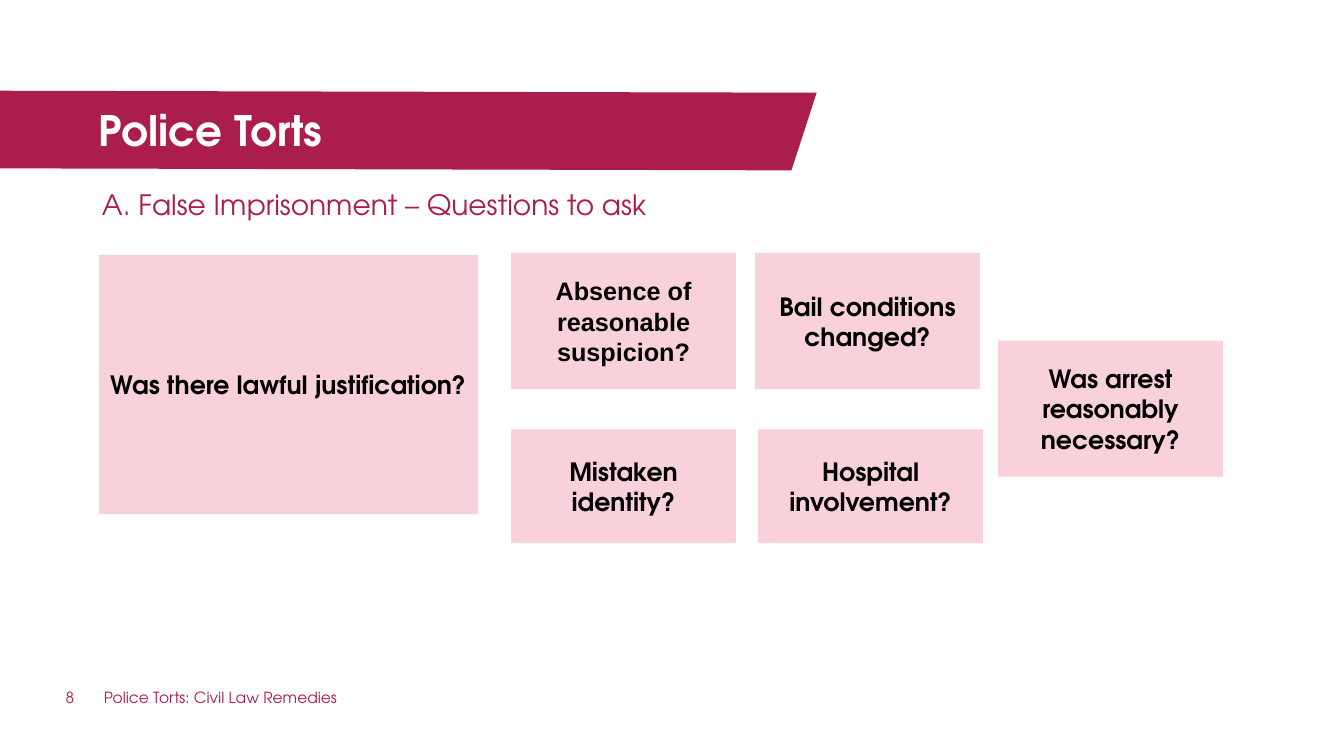
from pptx import Presentation
from pptx.dml.color import RGBColor
from pptx.enum.shapes import MSO_SHAPE
from pptx.enum.text import MSO_ANCHOR, MSO_AUTO_SIZE, PP_ALIGN
from pptx.util import Pt

PX = 9144
CRIMSON = RGBColor(0xAB, 0x1E, 0x4B)
PINK = RGBColor(0xF8, 0xD1, 0xDA)
WHITE = RGBColor(0xFF, 0xFF, 0xFF)
BLACK = RGBColor(0x00, 0x00, 0x00)
DISPLAY_FONT = "TeX Gyre Adventor"
PLAIN_FONT = "Arial"
RECTANGLE = MSO_SHAPE.RECTANGLE
TOP, MIDDLE = MSO_ANCHOR.TOP, MSO_ANCHOR.MIDDLE
LEFT, CENTER = PP_ALIGN.LEFT, PP_ALIGN.CENTER
NO_AUTOFIT = MSO_AUTO_SIZE.NONE


def scale(*lengths):
    """Turn lengths in px into EMU."""
    return [length * PX for length in lengths]


def place(shape, box):
    """Move and size a shape to a box of left, top, width and height."""
    shape.left, shape.top, shape.width, shape.height = scale(*box)


def write(shape, text, size, color, font=DISPLAY_FONT, bold=False, align=LEFT,
          anchor=TOP, inset=(0, 0), line_spacing=1.0, space_after=0):
    """Put one formatted paragraph into a shape."""
    frame = shape.text_frame
    frame.word_wrap = True
    frame.auto_size = NO_AUTOFIT
    frame.vertical_anchor = anchor
    frame.margin_left = frame.margin_right = inset[0] * PX
    frame.margin_top = frame.margin_bottom = inset[1] * PX
    frame.text = text
    paragraph = frame.paragraphs[0]
    paragraph.alignment = align
    paragraph.line_spacing = line_spacing
    paragraph.space_before = Pt(0)
    paragraph.space_after = Pt(space_after)
    run_font = paragraph.runs[0].font
    run_font.name = font
    run_font.size = Pt(size)
    run_font.bold = bold
    run_font.color.rgb = color


def paint(shape, color):
    """Give a shape a flat fill without line or shadow."""
    shape.shadow.inherit = False
    shape.fill.solid()
    shape.fill.fore_color.rgb = color
    shape.line.fill.background()


def add_heading(slide, box):
    """Draw the slanted band with the title on it and the subtitle below."""
    left, top, width, height = box
    builder = slide.shapes.build_freeform(left, top, scale=PX)
    builder.add_line_segments([
        (left + width, top + 2),
        (left + width - 25, top + height),
        (left, top + height - 2),
    ], close=True)
    band = builder.convert_to_shape()
    paint(band, CRIMSON)

    title = slide.shapes.title
    title.element.addprevious(band.element)
    place(title, (left + 98, top + 14, 682, 49))
    write(title, "Police Torts", 30, WHITE, bold=True)

    subtitle = slide.placeholders[1]
    place(subtitle, (left + 101, top + 89, 1087, 47))
    write(subtitle, "A. False Imprisonment – Questions to ask", 20, CRIMSON,
          line_spacing=1.2, space_after=2)


def add_card(slide, box, text, font=DISPLAY_FONT):
    """Draw a pink card with a centred question."""
    card = slide.shapes.add_shape(RECTANGLE, *scale(*box))
    paint(card, PINK)
    write(card, text, 18, BLACK, font=font, bold=True, align=CENTER,
          anchor=MIDDLE, inset=(10, 5))


def add_questions(slide, box):
    """Lay out the main question and its five follow-up cards."""
    left, top, width, height = box
    card_width, tall, short = 223, 135, 113
    first = left + 409
    second = first + card_width + 19
    last = left + width - card_width
    lower = top + height - short
    add_card(slide, (left, top + 2, 376, 257), "Was there lawful justification?")
    add_card(slide, (first, top, card_width, tall),
             "Absence of reasonable suspicion?", font=PLAIN_FONT)
    add_card(slide, (first, lower, card_width, short), "Mistaken identity?")
    add_card(slide, (second, top, card_width, tall), "Bail conditions changed?")
    add_card(slide, (second + 3, lower, card_width, short), "Hospital involvement?")
    add_card(slide, (last, top + 87, card_width, tall),
             "Was arrest reasonably necessary?")


def add_footer(slide, box):
    """Write the slide number and the name of the talk."""
    left, top, width, height = box
    number_width = 38
    for text, offset, text_width in (
        ("8", 0, number_width),
        ("Police Torts: Civil Law Remedies", number_width, width - number_width),
    ):
        label = slide.shapes.add_textbox(*scale(left + offset, top, text_width, height))
        write(label, text, 11, CRIMSON)


def main():
    """Build the slide and save it."""
    presentation = Presentation()
    presentation.slide_width, presentation.slide_height = scale(1333, 750)
    slide = presentation.slides.add_slide(presentation.slide_layouts[0])
    add_heading(slide, (0, 90, 810, 79))
    add_questions(slide, (98, 251, 1115, 288))
    add_footer(slide, (65, 683, 652, 35))
    presentation.save("out.pptx")


if __name__ == "__main__":
    main()
